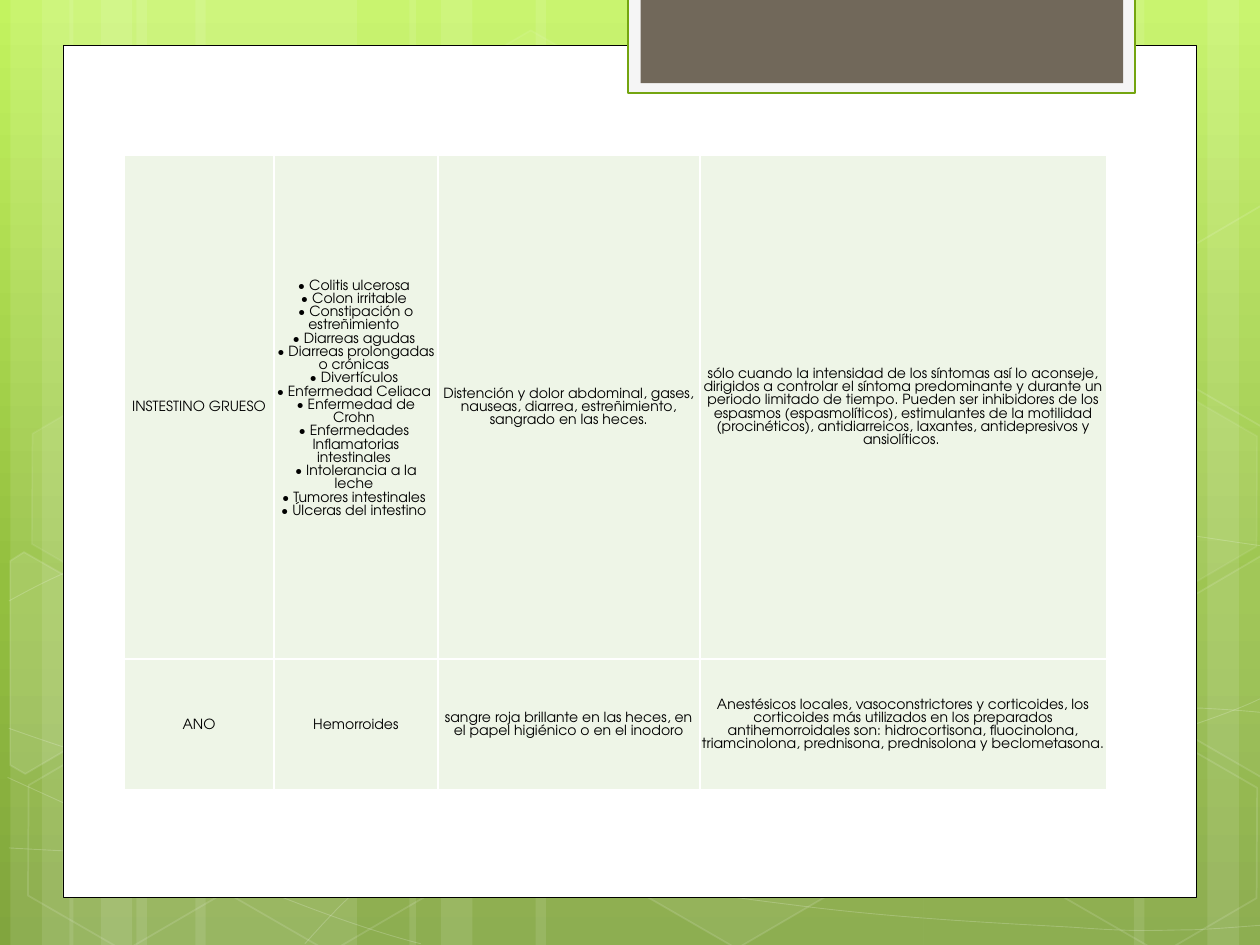
"""Build a slide with a table of bowel disorders on a green patterned frame."""
import copy
import math

import lxml.etree
import pptx
import pptx.dml.color
import pptx.enum.shapes
import pptx.enum.text
import pptx.oxml.ns
import pptx.util

WHITE = pptx.dml.color.RGBColor(0xFF, 0xFF, 0xFF)
BLACK = pptx.dml.color.RGBColor(0x00, 0x00, 0x00)
LIME = pptx.dml.color.RGBColor(0xC3, 0xF3, 0x5F)
GREEN = pptx.dml.color.RGBColor(0x93, 0xBF, 0x3F)
OLIVE = pptx.dml.color.RGBColor(0x81, 0xA5, 0x3E)
LEAF = pptx.dml.color.RGBColor(0x74, 0xA5, 0x10)
PALE = pptx.dml.color.RGBColor(0xF5, 0xF5, 0xF5)
BROWN = pptx.dml.color.RGBColor(0x71, 0x68, 0x5A)
MINT = pptx.dml.color.RGBColor(0xEE, 0xF5, 0xE7)
RECTANGLE = pptx.enum.shapes.MSO_SHAPE.RECTANGLE
HEXAGON = pptx.enum.shapes.MSO_SHAPE.HEXAGON
qn = pptx.oxml.ns.qn

deck = pptx.Presentation()
deck.slide_width, deck.slide_height = pptx.util.Inches(10), pptx.util.Inches(7.5)
COLUMNS, ROWS = 100, 75
UNIT = deck.slide_width / COLUMNS
page = deck.slides.add_slide(deck.slide_layouts[6])


def grid(*lengths):
    return [round(length * UNIT) for length in lengths]


def paint(shape, fill=None, line=None, width=1, fill_alpha=100, line_alpha=100):
    shape.shadow.inherit = False
    shape.line.width = pptx.util.Pt(width)
    properties = shape._element.spPr
    for target, color, alpha, holder in (
        (shape.fill, fill, fill_alpha, properties),
        (shape.line.fill, line, line_alpha, properties.find(qn("a:ln"))),
    ):
        if color is None or alpha == 0:
            target.background()
            continue
        target.solid()
        target.fore_color.rgb = color
        if alpha < 100:
            node = holder.find(qn("a:solidFill")).find(qn("a:srgbClr"))
            lxml.etree.SubElement(node, qn("a:alpha"), val=str(alpha * 1000))


backdrop = page.background.fill
backdrop.gradient()
backdrop.gradient_angle = 270
stop_list = page._element.find(".//" + qn("a:gsLst"))
stop_list.append(copy.deepcopy(stop_list[-1]))
for stop, position, color in zip(backdrop.gradient_stops, (0, 0.62, 1), (LIME, GREEN, OLIVE)):
    stop.position, stop.color.rgb = position, color

STRIPES = (
    (10.83, 17.5), (0.83, 5), (3.33, 8.33), (15.5, 17.5), (5.5, 5), (8, 8.33),
    (73.33, 17.5), (95.83, 5), (90, 8.33), (42.5, 30.83), (32.5, 5), (35, 8.33),
)
for left, width in STRIPES:
    paint(page.shapes.add_shape(RECTANGLE, *grid(left, 0, width, ROWS)), WHITE, fill_alpha=10)

CURVES = (
    ((0.7, 67.3), (6.1, 67.6), (11.5, 67.9), (19, 67.8), (26.5, 67.7), (35.8, 67.5), (45.8, 66.5),
     (55.8, 65.5), (70, 63.6), (79.2, 61.7), (88.3, 59.8), (97.7, 56.8), (100.7, 55.1)),
    ((0.7, 47.7), (3.6, 46.1), (6.5, 44.6), (12.1, 43.1), (17.8, 41.6), (25.9, 39.4), (34.7, 38.7),
     (43.6, 38), (54.4, 37.9), (65.4, 38.7), (76.4, 39.5), (94.7, 42.6), (100.7, 43.4)),
    ((0.6, 61.7), (12.7, 67.2), (24.7, 72.7), (33.4, 74.9)),
    ((0.7, 57.8), (3.8, 58.9), (7, 60), (12.8, 61.6), (18.6, 63.1), (27.3, 65.6), (35.7, 67.3),
     (44, 69), (54.5, 70.8), (62.8, 71.8), (71.1, 72.9), (80, 73.3), (85.3, 73.6),
     (90.5, 74), (91.9, 73.8), (94.5, 73.8), (97.1, 73.7), (98.9, 73.5), (100.7, 73.4)),
    ((24.2, 74.9), (26, 72.9), (27.8, 70.9), (30.2, 69.1), (32.6, 67.3), (36, 65.3), (38.8, 63.9),
     (41.6, 62.5), (43.3, 61.9), (47, 60.9), (50.6, 59.9), (57.3, 58.5), (60.8, 57.8),
     (64.4, 57.1), (64.9, 57.1), (68, 56.9), (71.1, 56.6), (76, 56.3), (79.4, 56.2),
     (82.9, 56.1), (88.6, 56.2), (88.6, 56.2), (90.8, 56.2), (93.1, 56.2), (95.3, 56.2),
     (97.1, 56.3), (98.8, 56.4), (100.6, 56.6)),
)
for points in CURVES:
    outline = page.shapes.build_freeform(*grid(*points[0]))
    outline.add_line_segments([grid(*point) for point in points[1:]], close=False)
    curve = outline.convert_to_shape()
    segments = curve._element.findall(".//" + qn("a:lnTo"))
    for first in range(0, len(segments), 3):
        bend = lxml.etree.Element(qn("a:cubicBezTo"))
        segments[first].addprevious(bend)
        for segment in segments[first:first + 3]:
            bend.append(segment[0])
            segment.getparent().remove(segment)
    paint(curve, line=WHITE, width=0.5, line_alpha=20)

TILT = 30
HEXAGONS = (
    (33.4, 3.6, 4, 8), (49.7, 58.9, 6, 12), (1.1, 59.1, 0, 12), (1.4, 31.2, 7, 8), (17.4, 59.2, 0, 12),
    (75.3, 45.3, 10, 12), (83.4, 59.3, 0, 12), (83.4, 31.4, 7, 8),
)
for left, top, fill_alpha, line_alpha in HEXAGONS:
    hexagon = page.shapes.add_shape(HEXAGON, *grid(left, top, 17.5, 15.2))
    hexagon.rotation = TILT
    hexagon.adjustments[0], hexagon.adjustments[1] = 0.285, 1.155
    paint(hexagon, WHITE, WHITE, 1, fill_alpha, line_alpha)

CUT_HEXAGONS = (
    ((3.6, 53.5), 10, ((0.8, 44.5), (1.9, 43.8), (9.6, 48.2), (9.5, 57), (2, 61.4), (0.8, 60.7))),
    ((98.5, 52), 4, ((92.6, 48.5), (100.1, 44.1), (100.9, 44.6), (100.9, 61.3), (100.2, 61.7), (92.6, 57.3))),
    ((98.5, 24.1), 0, ((92.6, 20.7), (100.1, 16.3), (101, 16.8), (100.9, 33.5), (100.2, 33.9), (92.6, 29.5))),
)
cosine, sine = math.cos(math.radians(TILT)), math.sin(math.radians(TILT))
for (center_x, center_y), fill_alpha, corners in CUT_HEXAGONS:
    offsets = [(x - center_x, y - center_y) for x, y in corners]
    upright = [grid(center_x + x * cosine + y * sine, center_y + y * cosine - x * sine) for x, y in offsets]
    outline = page.shapes.build_freeform(*upright[0])
    outline.add_line_segments(upright[1:])
    hexagon = outline.convert_to_shape()
    hexagon.rotation = TILT
    paint(hexagon, WHITE, WHITE, 1, fill_alpha, 12)

PANELS = (
    ((5, 3.6, 90, 67.65), WHITE, BLACK, 0.5),
    ((49.85, -0.2, 40.2, 7.6), PALE, LEAF, 1.25),
    ((50.85, -0.2, 38.3, 6.8), BROWN, None, 1),
)
for bounds, fill, line, width in PANELS:
    paint(page.shapes.add_shape(RECTANGLE, *grid(*bounds)), fill, line, width)

CONTENT = (
    (
        "INSTESTINO GRUESO",
        "• Colitis ulcerosa \v• Colon irritable \v• Constipación o estreñimiento \v• Diarreas agudas \v"
        "• Diarreas prolongadas o crónicas \v• Divertículos \v• Enfermedad Celiaca \v• Enfermedad de Crohn \v"
        "• Enfermedades \vInflamatorias intestinales \v• Intolerancia a la leche \v• Tumores intestinales \v"
        "• Úlceras del intestino ",
        "Distención y dolor abdominal, gases, nauseas, diarrea, estreñimiento, sangrado en las heces.",
        "sólo cuando la intensidad de los síntomas así lo aconseje, dirigidos a controlar el síntoma "
        "predominante y durante un periodo limitado de tiempo. Pueden ser inhibidores de los espasmos "
        "(espasmolíticos), estimulantes de la motilidad (procinéticos), antidiarreicos, laxantes, "
        "antidepresivos y ansiolíticos. ",
    ),
    (
        "ANO",
        "Hemorroides",
        "sangre roja brillante en las heces, en el papel higiénico o en el inodoro",
        "Anestésicos locales, vasoconstrictores y corticoides, los corticoides más utilizados en los "
        "preparados antihemorroidales son: hidrocortisona, fluocinolona, triamcinolona, prednisona, "
        "prednisolona y beclometasona. ",
    ),
)
MARGIN = pptx.util.Inches(0.01)
CELL_FORMAT = {
    "margin_left": MARGIN, "margin_right": MARGIN, "margin_top": MARGIN, "margin_bottom": 0,
    "vertical_anchor": pptx.enum.text.MSO_ANCHOR.MIDDLE,
}
FONT_FORMAT = {"name": "TeX Gyre Adventor", "size": pptx.util.Pt(8), "bold": False}
table = page.shapes.add_table(2, 4, *grid(9.85, 12.3, 78, 50.4)).table
for column, width in zip(table.columns, grid(11.9, 13, 20.8, 32.3)):
    column.width = width
for row, height, texts in zip(table.rows, grid(40, 10.4), CONTENT):
    row.height = height
    for cell, text in zip(row.cells, texts):
        for name, value in CELL_FORMAT.items():
            setattr(cell, name, value)
        if "\v" in text:
            cell.margin_bottom = pptx.util.Inches(0.14)
        cell.fill.solid()
        cell.fill.fore_color.rgb = MINT
        para = cell.text_frame.paragraphs[0]
        para.text = text
        para.alignment = pptx.enum.text.PP_ALIGN.CENTER
        for span in para.runs:
            span.font.color.rgb = BLACK
            for name, value in FONT_FORMAT.items():
                setattr(span.font, name, value)
        for mark in para._p.findall(qn("a:br")):
            mark.append(copy.deepcopy(para.runs[0].font._element))
        for place, side in enumerate(("a:lnL", "a:lnR", "a:lnT", "a:lnB")):
            border = lxml.etree.Element(qn(side), w=str(pptx.util.Pt(1)))
            color = lxml.etree.SubElement(border, qn("a:solidFill"))
            lxml.etree.SubElement(color, qn("a:srgbClr"), val=str(WHITE))
            cell._tc.get_or_add_tcPr().insert(place, border)

deck.save("out.pptx")
